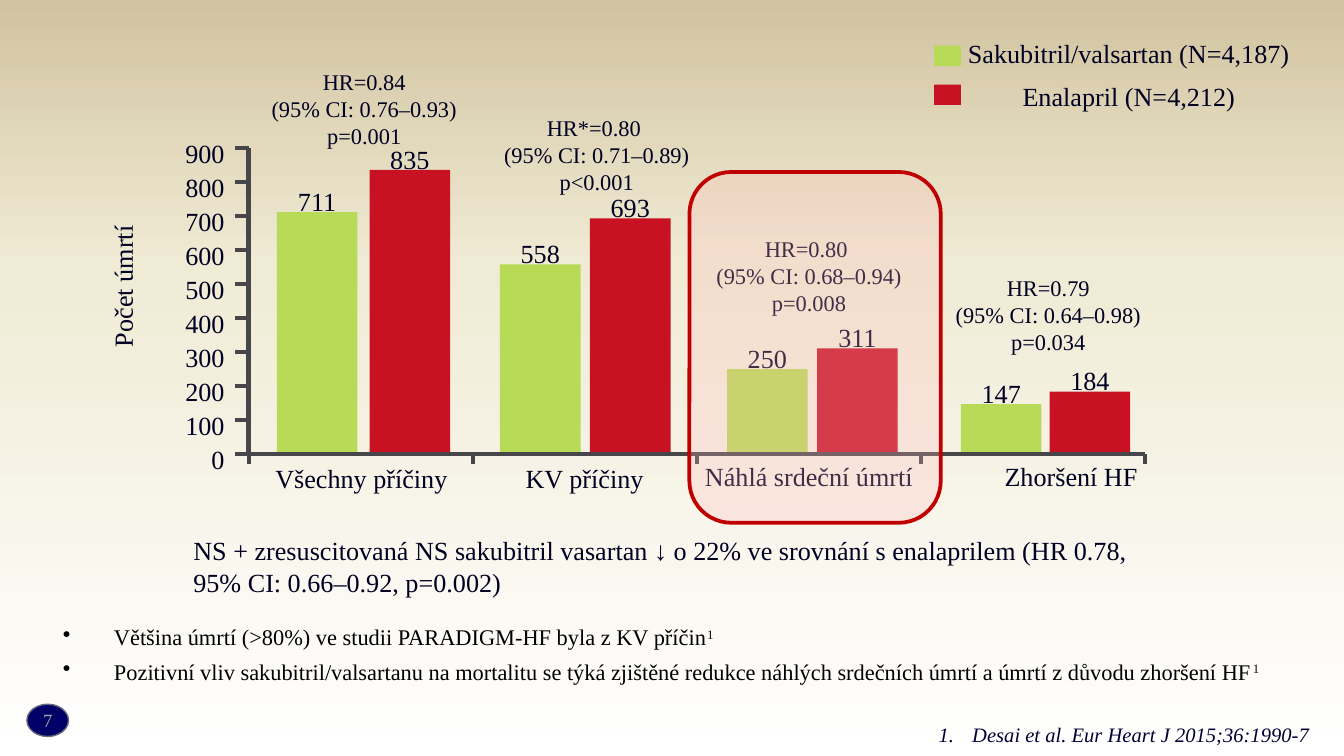
from collections import namedtuple

from lxml import etree
from pptx import Presentation
from pptx import util as u
from pptx.dml.color import RGBColor
from pptx.enum import shapes, text
from pptx.oxml.ns import qn

Box = namedtuple("Box", "left top width height")
Group = namedtuple("Group", "name centre spacing bars ratio ratio_left ratio_top")

FONT = "Times New Roman"
COLORS = {
    "ink": "000022", "axis": "474749", "green": "B8DB57", "red": "C91124",
    "frame": "C00000", "tint": "FFB9B9", "badge": "000066", "badge_line": "69697D",
    "number": "A6A6A6", "black": "000000", "mark": "080808", "source": "000033",
}
BACKGROUND = [(0, "FFFFFF"), (65, "F0EBD5"), (100, "D1C39F")]
ALIGN, ANCHOR, SHAPE = text.PP_ALIGN, text.MSO_ANCHOR, shapes.MSO_SHAPE

# Bars are (left edge, deaths) for green, then red
GROUPS = [
    Group("Všechny příčiny", 2.69, None, [(2.06, 711), (2.75, 835)],
          ["HR=0.84\v(95% CI: 0.76–0.93)", "p=0.001"], 1.87, 0.58),
    Group("KV příčiny", 4.35, None, [(3.72, 558), (4.39, 693)],
          ["HR*=0.80 \v(95% CI: 0.71–0.89)", "p<0.001"], 3.6, 0.92),
    Group("Náhlá srdeční úmrtí", 6.02, u.Pt(16), [(5.41, 250), (6.08, 311)],
          ["HR=0.80 \v(95% CI: 0.68–0.94)", "p=0.008"], 5.18, 1.82),
    Group("Zhoršení HF", 7.97, u.Pt(16), [(7.15, 147), (7.81, 184)],
          ["HR=0.79\v(95% CI: 0.64–0.98)", "p=0.034"], 6.96, 2.11),
]
MAXIMUM, STEP, BAR_WIDTH = 900, 100, 0.6


def rgb(name):
    return RGBColor.from_string(COLORS[name])


def inches(box):
    return [u.Inches(value) for value in box]


def style_span(span, size, color="ink", italic=False):
    values = {"name": FONT, "size": u.Pt(size), "italic": italic}
    for key, value in values.items():
        setattr(span.font, key, value)
    span.font.color.rgb = rgb(color)


def add_text(page, box, lines, size=14, color="ink", wrap=False, inset=None,
             anchor=ANCHOR.TOP, italic=False, **para_format):
    label = page.shapes.add_textbox(*inches(box))
    frame = label.text_frame
    frame.word_wrap = wrap
    frame.vertical_anchor = anchor
    if inset is not None:
        for side in ("left", "top", "right", "bottom"):
            setattr(frame, f"margin_{side}", u.Inches(inset))
    for index, line in enumerate(lines):
        para = frame.add_paragraph() if index else frame.paragraphs[0]
        para.text = line
        for key, value in {"alignment": ALIGN.CENTER, **para_format}.items():
            setattr(para, key, value)
        for span in para.runs:
            style_span(span, size, color, italic)
    return label


def add_block(page, box, fill, kind=SHAPE.RECTANGLE, line=None, weight=1):
    block = page.shapes.add_shape(kind, *inches(box))
    block.shadow.inherit = False
    block.fill.solid()
    block.fill.fore_color.rgb = rgb(fill)
    if line:
        block.line.color.rgb = rgb(line)
        block.line.width = u.Pt(weight)
    else:
        block.line.fill.background()
    return block


def style_axis(line):
    line.color.rgb = rgb("axis")
    line.width = u.Pt(2.25)


def add_tick(page, *ends):
    tick = page.shapes.add_connector(shapes.MSO_CONNECTOR.STRAIGHT, *inches(ends))
    style_axis(tick.line)
    etree.SubElement(tick._element.spPr, qn("a:effectLst"))


def add_list_mark(para, tag, indent, **attributes):
    properties = para._p.get_or_add_pPr()
    properties.set("marL", str(u.Inches(indent)))
    properties.set("indent", str(-u.Inches(indent)))
    etree.SubElement(properties, qn(tag), **attributes)


def paint_background(page):
    fill = page.background.fill
    fill.gradient()
    fill.gradient_angle = 90
    stops = page.background._cSld.find(".//" + qn("a:gsLst"))
    for stop in list(stops):
        stops.remove(stop)
    for position, color in BACKGROUND:
        stop = etree.SubElement(stops, qn("a:gs"), pos=str(position * 1000))
        etree.SubElement(stop, qn("a:srgbClr"), val=color)


def draw_axes(page, plot):
    right, bottom = plot.left + plot.width, plot.top + plot.height
    # Value axis ticks and labels
    for value in range(0, MAXIMUM + 1, STEP):
        y = bottom - plot.height * value / MAXIMUM
        add_text(page, Box(plot.left - 0.58, y - 0.13, 0.5, 0.34), [str(value)],
                 alignment=ALIGN.RIGHT)
        add_tick(page, plot.left, y, plot.left - 0.1, y)
    # Category ticks
    for index in range(len(GROUPS) + 1):
        x = plot.left + plot.width * index / len(GROUPS)
        add_tick(page, x, bottom, x, bottom + 0.07)
    title = add_text(page, Box(plot.left - 1.49, plot.top + 0.86, 1.11, 0.34),
                     ["Počet úmrtí"])
    title.rotation = 270
    # Both axis lines in one outline
    builder = page.shapes.build_freeform(u.Inches(plot.left), u.Inches(plot.top))
    corners = [(plot.left, bottom), (right, bottom)]
    builder.add_line_segments([inches(corner) for corner in corners], close=False)
    axes = builder.convert_to_shape()
    axes.fill.background()
    axes.shadow.inherit = False
    style_axis(axes.line)


def draw_group(page, plot, group):
    bottom = plot.top + plot.height
    for (left, value), color in zip(group.bars, ("green", "red")):
        height = plot.height * value / MAXIMUM
        top = bottom - height
        add_block(page, Box(left, top, BAR_WIDTH, height), color)
        add_text(page, Box(left + 0.05, top - 0.25, 0.5, 0.34), [str(value)])
    add_text(page, Box(group.centre - 1, bottom + 0.01, 2, 0.34), [group.name],
             line_spacing=group.spacing)
    add_text(page, Box(group.ratio_left, group.ratio_top, 1.68, 0.46), group.ratio,
             size=12, wrap=True, inset=0.08, anchor=ANCHOR.MIDDLE)


def draw_legend(page, box):
    for index, color in enumerate(("green", "red")):
        add_block(page, Box(box.left, box.top + 0.11 + 0.29 * index, 0.2, 0.15), color)
    add_text(page, Box(box.left + 0.15, box.top, box.width - 0.15, box.height),
             ["Sakubitril/valsartan (N=4,187)", "Enalapril (N=4,212)"],
             space_after=u.Pt(6))


def draw_highlight(page, box):
    frame = add_block(page, box, "tint", SHAPE.ROUNDED_RECTANGLE, "frame", 2)
    color = frame._element.spPr.find(qn("a:solidFill"))[0]
    etree.SubElement(color, qn("a:alpha"), val="25000")


def draw_findings(page, box):
    findings = [
        "Většina úmrtí (>80%) ve studii PARADIGM-HF byla z KV příčin",
        "Pozitivní vliv sakubitril/valsartanu na mortalitu se týká zjištěné redukce "
        "náhlých srdečních úmrtí a úmrtí z důvodu zhoršení HF",
    ]
    body = add_text(page, box, findings, size=12, color="black", wrap=True,
                    alignment=ALIGN.LEFT, space_before=u.Pt(3), space_after=u.Pt(1))
    for para in body.text_frame.paragraphs:
        add_list_mark(para, "a:buChar", 0.38, char="•")
        mark = para.add_run()
        mark.text = "1"
        style_span(mark, 12, "mark")
        mark.font._element.set("baseline", "30000")
        mark.font._element.set("spc", "-50")


def draw_source(page, box):
    label = add_text(page, box, ["Desai et al. Eur Heart J 2015;36:1990-7"], size=11,
                     color="source", wrap=True, italic=True, alignment=ALIGN.RIGHT)
    add_list_mark(label.text_frame.paragraphs[0], "a:buAutoNum", 0.25,
                  type="arabicPeriod")


def draw_page_number(page, box):
    add_block(page, box, "badge", SHAPE.OVAL, "badge_line", 0.75)
    add_text(page, box, ["7"], size=10, color="number", inset=0,
             anchor=ANCHOR.MIDDLE, line_spacing=u.Pt(12))


def main():
    deck = Presentation()
    deck.slide_width = u.Inches(10)
    deck.slide_height = deck.slide_width * 9 // 16
    page = deck.slides.add_slide(deck.slide_layouts[6])
    paint_background(page)
    draw_page_number(page, Box(0.2, 5.24, 0.31, 0.24))
    draw_findings(page, Box(0.37, 4.59, 9.23, 0.65))
    draw_source(page, Box(6.42, 5.32, 3.42, 0.28))

    plot = Box(1.85, 1.1, 6.67, 2.28)
    for group in GROUPS:
        draw_group(page, plot, group)
    draw_axes(page, plot)
    draw_legend(page, Box(6.95, 0.23, 2.75, 0.66))
    add_text(page, Box(1.34, 3.93, 7.3, 0.57),
             ["NS + zresuscitovaná NS sakubitril vasartan ↓ o 22% ve srovnání "
              "s enalaprilem (HR 0.78, 95% CI: 0.66–0.92, p=0.002)"],
             wrap=True, alignment=ALIGN.LEFT, space_before=u.Pt(4.2))
    draw_highlight(page, Box(5.13, 1.28, 1.87, 2.61))
    deck.save("out.pptx")


if __name__ == "__main__":
    main()
